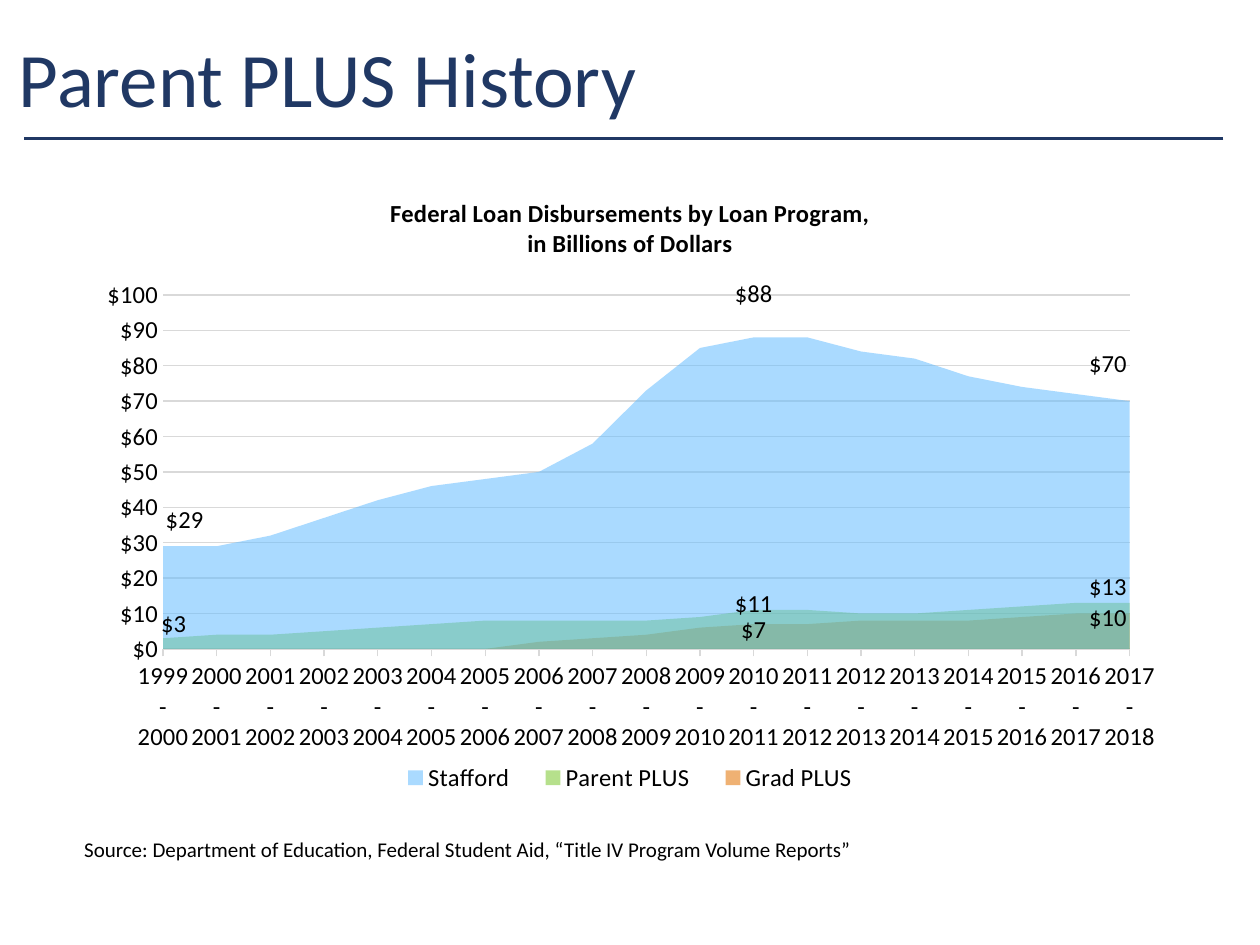
import pptx
import pptx.chart.data
import pptx.dml.color
import pptx.enum.chart
import pptx.enum.shapes
import pptx.enum.text
import pptx.oxml
import pptx.oxml.ns
import pptx.util
from lxml import etree

COLORS = {"navy": "203864", "black": "000000", "grid": "D9D9D9"}
FONT = "Calibri"
DOLLARS = '"$"#,##0'
WIDTH, HEIGHT = 10, 7.5
TITLE = "Parent PLUS History"
SOURCE = "Source: Department of Education, Federal Student Aid, “Title IV Program Volume Reports”"
CHART_TITLE = ["Federal Loan Disbursements by Loan Program,", "in Billions of Dollars"]
YEARS = [f"{year}-{year + 1}" for year in range(1999, 2018)]
PROGRAMS = [
    {"name": "Stafford", "color": "65BDFF", "alpha": 55,
     "values": [29, 29, 32, 37, 42, 46, 48, 50, 58, 73, 85, 88, 88, 84, 82, 77, 74, 72, 70],
     "labels": {0: (0.02, -0.12), 11: (0, -0.31), 18: (-0.02, -0.25)}},
    {"name": "Parent PLUS", "color": "5EBC00", "alpha": 45,
     "values": [3, 4, 4, 5, 6, 7, 8, 8, 8, 8, 9, 11, 11, 10, 10, 11, 12, 13, 13],
     "labels": {0: (0.01, -0.03), 11: (0, -0.04), 18: (-0.02, -0.06)}},
    {"name": "Grad PLUS", "color": "E27100", "alpha": 55,
     "values": [0, 0, 0, 0, 0, 0, 0, 2, 3, 4, 6, 7, 7, 8, 8, 8, 9, 10, 10],
     "labels": {11: (0, -0.01), 18: (-0.02, -0.02)}},
]


def rgb(value):
    return pptx.dml.color.RGBColor.from_string(value)


def style(font, size, color=COLORS["black"], bold=False):
    font.name = FONT
    font.size = pptx.util.Pt(size)
    font.bold = bold
    font.color.rgb = rgb(color)


def box(left, top, width, height):
    return [pptx.util.Inches(length) for length in (left, top, width, height)]


def layout(x, y, w=None, h=None, inner=False):
    parts = [("layoutTarget", "inner")] if inner else []
    if w:
        parts += [("xMode", "edge"), ("yMode", "edge")]
    parts += [("x", x), ("y", y)]
    if w:
        parts += [("w", w), ("h", h)]
    children = "".join(f'<c:{tag} val="{value}"/>' for tag, value in parts)
    return pptx.oxml.parse_xml(
        f'<c:layout {pptx.oxml.ns.nsdecls("c")}><c:manualLayout>{children}</c:manualLayout></c:layout>')


def place(element, new_layout, index):
    for old in element.xpath("./c:layout"):
        element.remove(old)
    element.insert(index, new_layout)


def add_heading(slide):
    title = slide.shapes.title
    title.left, title.top, title.width, title.height = box(0.05, 0.22, 8.62, 0.87)
    title.text_frame.text = TITLE
    title.text_frame.vertical_anchor = pptx.enum.text.MSO_ANCHOR.MIDDLE
    paragraph = title.text_frame.paragraphs[0]
    paragraph.alignment = pptx.enum.text.PP_ALIGN.LEFT
    paragraph.line_spacing = 0.9
    style(paragraph.font, 44, COLORS["navy"])
    rule = slide.shapes.add_connector(
        pptx.enum.shapes.MSO_CONNECTOR.STRAIGHT, *box(9.71, 1.1, 0.19, 1.1))
    rule.line.color.rgb = rgb(COLORS["navy"])
    rule.line.width = pptx.util.Pt(1.75)
    etree.SubElement(rule._element.spPr, pptx.oxml.ns.qn("a:effectLst"))


def add_source(slide):
    frame = slide.shapes.add_textbox(*box(0.57, 6.59, 8.87, 0.3)).text_frame
    frame.word_wrap = True
    frame.text = SOURCE
    style(frame.paragraphs[0].font, 12)


def style_axes(chart):
    years, dollars = chart.category_axis, chart.value_axis
    for axis in (years, dollars):
        style(axis.tick_labels.font, 14)
    years.has_major_gridlines = False
    years.major_tick_mark = pptx.enum.chart.XL_TICK_MARK.OUTSIDE
    dollars.major_tick_mark = pptx.enum.chart.XL_TICK_MARK.NONE
    dollars.has_major_gridlines = True
    for line in (years.format.line, dollars.major_gridlines.format.line):
        line.color.rgb = rgb(COLORS["grid"])
        line.width = pptx.util.Pt(0.75)
    dollars.format.line.fill.background()
    dollars.minimum_scale, dollars.maximum_scale, dollars.major_unit = 0, 100, 10
    dollars.tick_labels.number_format = DOLLARS
    dollars.tick_labels.number_format_is_linked = False
    for crossing in dollars._element.xpath("./c:crossBetween"):
        crossing.set("val", "midCat")


def style_series(series, program):
    series.format.fill.solid()
    series.format.fill.fore_color.rgb = rgb(program["color"])
    series.format.line.fill.background()
    color = series._element.xpath("./c:spPr/a:solidFill/a:srgbClr")[0]
    etree.SubElement(color, pptx.oxml.ns.qn("a:alpha"), val=str(program["alpha"] * 1000))
    labels = series.data_labels
    labels.show_value = False
    labels.number_format = DOLLARS
    labels.number_format_is_linked = False
    style(labels.font, 14)
    for leader in labels._element.xpath("./c:showLeaderLines"):
        leader.set("val", "0")
    for index, offset in program["labels"].items():
        style(series.points[index].data_label.font, 14)
        label = labels._element.xpath(f"./c:dLbl[c:idx/@val='{index}']")[0]
        place(label, layout(*offset), 1)
        label.insert(2, pptx.oxml.parse_xml(
            f'<c:numFmt {pptx.oxml.ns.nsdecls("c")} formatCode="&quot;$&quot;#,##0" sourceLinked="0"/>'))


def add_loan_chart(slide):
    data = pptx.chart.data.CategoryChartData(number_format=DOLLARS)
    data.categories = YEARS
    for program in PROGRAMS:
        data.add_series(program["name"], program["values"])
    chart = slide.shapes.add_chart(
        pptx.enum.chart.XL_CHART_TYPE.AREA, *box(0.69, 1.37, 8.62, 5.11), data).chart
    style(chart.font, 10)
    chart.has_title = True
    heading = chart.chart_title.text_frame
    heading.text = "\n".join(CHART_TITLE)
    for paragraph in heading.paragraphs:
        style(paragraph.font, 14, bold=True)
    chart.has_legend = True
    chart.legend.position = pptx.enum.chart.XL_LEGEND_POSITION.BOTTOM
    chart.legend.include_in_layout = False
    style(chart.legend.font, 14)
    style_axes(chart)
    plot = chart.plots[0]
    plot.vary_by_categories = False
    for series, program in zip(plot.series, PROGRAMS):
        style_series(series, program)
    place(chart._chartSpace.xpath("./c:chart/c:plotArea")[0],
          layout(0.07, 0.19, 0.89, 0.55, inner=True), 0)
    place(chart.legend._element, layout(0.27, 0.91, 0.46, 0.06), 1)


def main():
    presentation = pptx.Presentation()
    presentation.slide_width = pptx.util.Inches(WIDTH)
    presentation.slide_height = pptx.util.Inches(HEIGHT)
    slide = presentation.slides.add_slide(presentation.slide_layouts[5])
    add_heading(slide)
    add_source(slide)
    add_loan_chart(slide)
    presentation.save("out.pptx")


if __name__ == "__main__":
    main()
